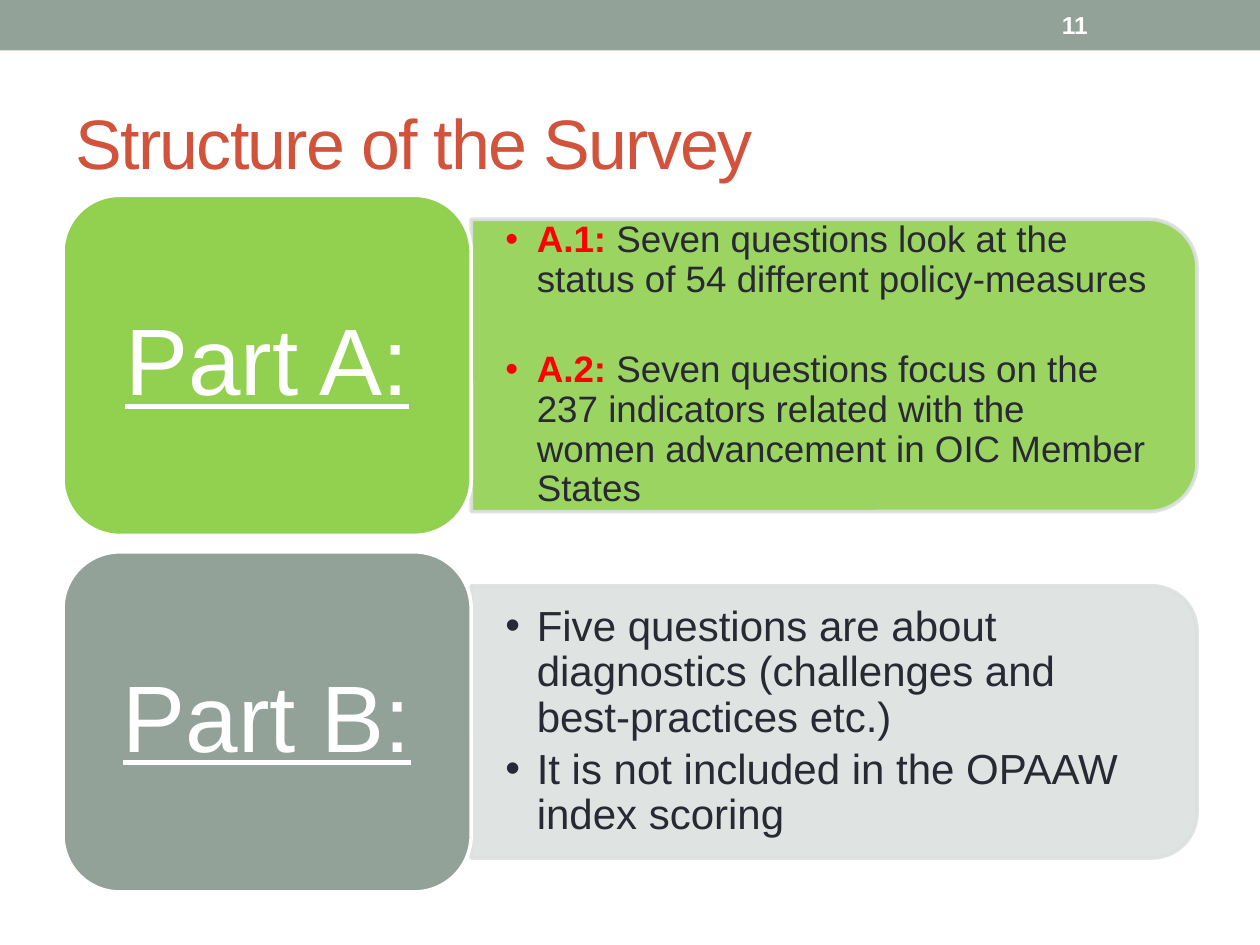
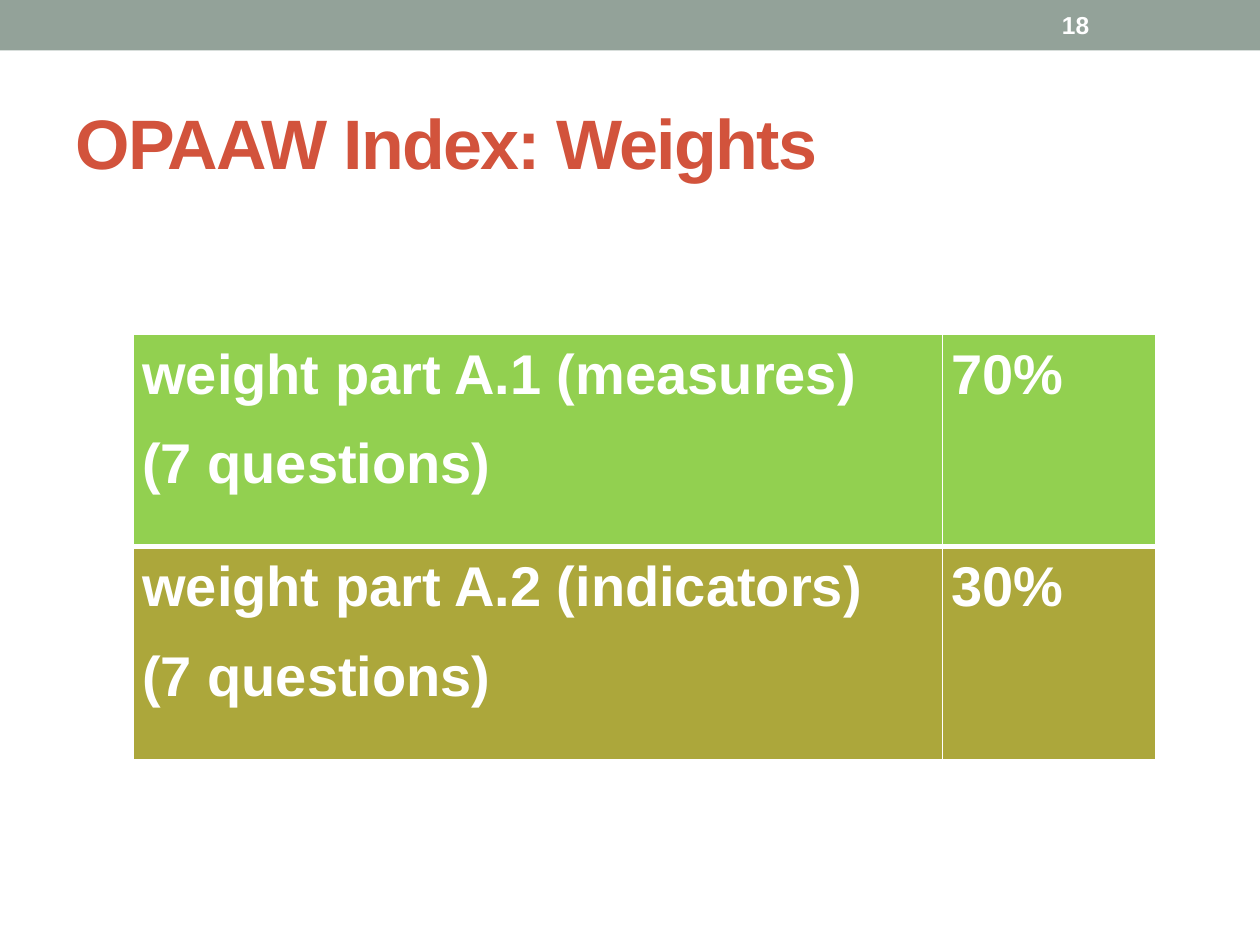
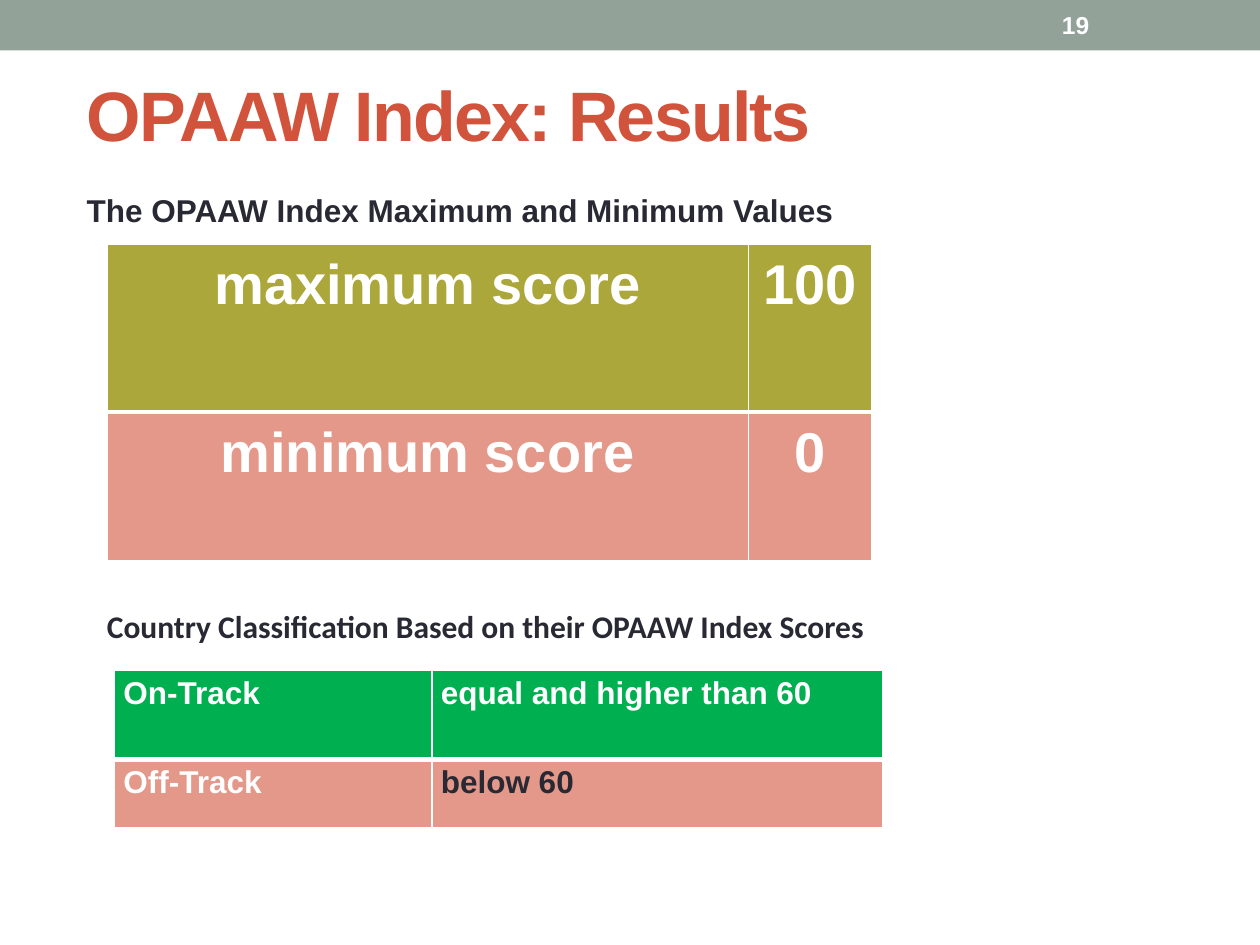
from lxml import etree
from pptx import Presentation
from pptx.dml.color import RGBColor
from pptx.enum.shapes import MSO_SHAPE
from pptx.enum.text import MSO_ANCHOR, PP_ALIGN
from pptx.oxml.ns import qn
from pptx.util import Inches, Pt

RECT = MSO_SHAPE.RECTANGLE
ROUNDED = MSO_SHAPE.ROUNDED_RECTANGLE
TWO_ROUNDED = MSO_SHAPE.ROUND_2_SAME_RECTANGLE
MIDDLE, TOP = MSO_ANCHOR.MIDDLE, MSO_ANCHOR.TOP
LEFT, CENTER = PP_ALIGN.LEFT, PP_ALIGN.CENTER

WHITE, INK, RED = "FFFFFF", "292934", "FF0000"
TITLE_COLOR, SAGE, PALE = "D2533C", "93A299", "DCE0DE"
LIME, OLIVE, SALMON, GREEN = "92D050", "ACA73B", "E4988A", "00B050"
FONT = "Arial"
TITLE_ONLY = 5
OUTLINE = 2.08
PART_LEFT, PART_WIDTH, PART_HEIGHT = 0.5, 3.24, 2.7
PANEL_WIDTH = 5.76


def rgb(color):
    return RGBColor.from_string(color)


def add_run(paragraph, text, size, color, bold=False, underline=False, font=FONT):
    run = paragraph.add_run()
    run.text = text
    run.font.name = font
    run.font.size = Pt(size)
    run.font.bold = bold
    run.font.underline = underline
    run.font.color.rgb = rgb(color)
    return run


def set_frame(frame, anchor, inset_x=0.1, inset_y=0.05, wrap=True):
    frame.word_wrap = wrap
    frame.vertical_anchor = anchor
    frame.margin_left = frame.margin_right = Inches(inset_x)
    frame.margin_top = frame.margin_bottom = Inches(inset_y)


def paragraph_at(frame, index):
    return frame.add_paragraph() if index else frame.paragraphs[0]


def add_filled(slide, kind, box, fill, line=None):
    shape = slide.shapes.add_shape(kind, *map(Inches, box))
    shape.shadow.inherit = False
    shape.fill.solid()
    shape.fill.fore_color.rgb = rgb(fill)
    if line:
        shape.line.color.rgb = rgb(line)
        shape.line.width = Pt(OUTLINE)
    else:
        shape.line.fill.background()
    return shape


def add_label(slide, box, text, size, color, anchor=TOP, wrap=True, font=FONT):
    frame = slide.shapes.add_textbox(*map(Inches, box)).text_frame
    set_frame(frame, anchor, wrap=wrap)
    add_run(frame.paragraphs[0], text, size, color, bold=True, font=font)


def start_slide(prs, title_text, number, bold=True, left=0.5, top=0.58):
    """Add a slide with its title, top band and slide number."""
    slide = prs.slides.add_slide(prs.slide_layouts[TITLE_ONLY])
    title = slide.shapes.title
    title.left, title.top = Inches(left), Inches(top)
    title.width, title.height = Inches(9), Inches(1.08)
    set_frame(title.text_frame, MIDDLE)
    paragraph = title.text_frame.paragraphs[0]
    paragraph.alignment = LEFT
    run = add_run(paragraph, title_text, 40, TITLE_COLOR, bold)
    run.font._element.set("spc", "-100")
    add_filled(slide, RECT, (0, 0, 10, 0.4), SAGE)
    add_label(slide, (8.33, 0.02, 1.17, 0.36), str(number), 14, WHITE, MIDDLE)
    return slide


def make_translucent(shape, percent):
    """Apply the opacity to both fill and outline."""
    for color in shape.element.spPr.iter(qn("a:srgbClr")):
        etree.SubElement(color, qn("a:alpha"), val=str(percent * 1000))


def add_bullet(paragraph):
    properties = paragraph._p.get_or_add_pPr()
    properties.set("marL", str(Inches(0.25)))
    properties.set("indent", str(-Inches(0.25)))
    etree.SubElement(properties, qn("a:buFont"), typeface=FONT)
    etree.SubElement(properties, qn("a:buChar"), char="•")


def add_part(slide, top, name, color, panel_color, panel_height, text_height,
             size, gap, points):
    """Add a named block and, centred to its right, a panel of bullet points."""
    middle = top + PART_HEIGHT / 2
    panel_left = PART_LEFT + PART_WIDTH
    panel_center = panel_left + PANEL_WIDTH / 2
    panel = add_filled(slide, TWO_ROUNDED,
                       (panel_center - panel_height / 2, middle - PANEL_WIDTH / 2,
                        panel_height, PANEL_WIDTH), panel_color, PALE)
    panel.rotation = 90
    make_translucent(panel, 90)

    frame = slide.shapes.add_textbox(
        Inches(panel_left), Inches(middle - text_height / 2),
        Inches(5.65), Inches(text_height)).text_frame
    set_frame(frame, MIDDLE, 0.27, 0.14)
    for index, (lead, text) in enumerate(points):
        paragraph = paragraph_at(frame, index)
        paragraph.line_spacing = 0.9
        if index < len(points) - 1:
            paragraph.space_after = Pt(gap)
        add_bullet(paragraph)
        if lead:
            add_run(paragraph, lead, size, RED, bold=True)
        add_run(paragraph, text, size, INK)

    block = add_filled(slide, ROUNDED,
                       (PART_LEFT, top, PART_WIDTH, PART_HEIGHT), color, WHITE)
    set_frame(block.text_frame, MIDDLE, 0.23, 0.11)
    heading = block.text_frame.paragraphs[0]
    heading.alignment = CENTER
    heading.line_spacing = 0.9
    add_run(heading, name, 54, WHITE, underline=True)


def set_borders(cell, top, bottom):
    """Draw white borders: 1 pt at the sides, the given widths above and below."""
    properties = cell._tc.get_or_add_tcPr()
    sides = (("a:lnL", 1), ("a:lnR", 1), ("a:lnT", top), ("a:lnB", bottom))
    for index, (tag, width) in enumerate(sides):
        line = etree.Element(qn(tag), w=str(Pt(width)))
        fill = etree.SubElement(line, qn("a:solidFill"))
        etree.SubElement(fill, qn("a:srgbClr"), val=WHITE)
        properties.insert(index, line)


def add_score_table(slide, left, top, widths, heights, rows, fills, size,
                    align=LEFT, dark_cells=()):
    """Add a table; each cell is a tuple of lines and each row has one fill."""
    table = slide.shapes.add_table(
        len(rows), len(widths), Inches(left), Inches(top),
        Inches(sum(widths)), Inches(sum(heights))).table
    table.first_row = table.horz_banding = False
    for column, width in zip(table.columns, widths):
        column.width = Inches(width)
    for r, (height, lines_by_cell) in enumerate(zip(heights, rows)):
        table.rows[r].height = Inches(height)
        for c, lines in enumerate(lines_by_cell):
            cell = table.cell(r, c)
            cell.fill.solid()
            cell.fill.fore_color.rgb = rgb(fills[r])
            set_borders(cell, 3 if r else 1, 1 if r else 3)
            cell.margin_left = cell.margin_right = Inches(0.07)
            cell.margin_top = cell.margin_bottom = 0
            color = INK if (r, c) in dark_cells else WHITE
            for index, text in enumerate(lines):
                paragraph = paragraph_at(cell.text_frame, index)
                paragraph.alignment = align
                paragraph.line_spacing = 1.15
                paragraph.space_after = Pt(10)
                add_run(paragraph, text, size, color, bold=True)


def build_structure(prs):
    slide = start_slide(prs, "Structure of the Survey", 11, bold=False)
    add_part(slide, 1.55, "Part A:", LIME, LIME, 2.32, 2.1, 21, 29, [
        ("A.1: ", "Seven questions look at the status of 54 different "
                  "policy-measures"),
        ("A.2: ", "Seven questions focus on the 237 indicators related with "
                  "the women advancement in OIC Member States"),
    ])
    add_part(slide, 4.38, "Part B:", SAGE, PALE, 2.16, 1.95, 24, 4, [
        ("", "Five questions are about diagnostics (challenges and "
             "best-practices etc.)"),
        ("", "It is not included in the OPAAW index scoring"),
    ])


def build_weights(prs):
    slide = start_slide(prs, "OPAAW Index: Weights", 18)
    add_score_table(slide, 1.06, 2.65, (6.42, 1.69), (1.69, 1.69), [
        [("weight part A.1 (measures)", "(7 questions)"), ("70%",)],
        [("weight part A.2 (indicators)", "(7 questions)"), ("30%",)],
    ], (LIME, OLIVE), 32)


def build_results(prs):
    slide = start_slide(prs, "OPAAW Index: Results", 19, left=0.59, top=0.36)
    add_label(slide, (0.59, 1.47, 7.4, 0.4),
              "The OPAAW Index Maximum and Minimum Values", 18, INK)
    add_score_table(slide, 0.85, 1.94, (5.09, 0.98), (1.33, 1.18), [
        [("maximum score",), ("100",)],
        [("minimum score",), ("0",)],
    ], (OLIVE, SALMON), 32, CENTER)
    add_label(slide, (0.75, 4.77, 6.26, 0.4),
              "Country Classification Based on their OPAAW Index Scores",
              18, INK, MIDDLE, wrap=False, font="Calibri")
    add_score_table(slide, 0.91, 5.32, (2.52, 3.58), (0.71, 0.54), [
        [("On-Track",), ("equal and higher than 60",)],
        [("Off-Track",), ("below 60",)],
    ], (GREEN, SALMON), 18, dark_cells={(1, 1)})


def main():
    prs = Presentation()
    prs.slide_width, prs.slide_height = Inches(10), Inches(7.5)
    build_structure(prs)
    build_weights(prs)
    build_results(prs)
    prs.save("out.pptx")


if __name__ == "__main__":
    main()
